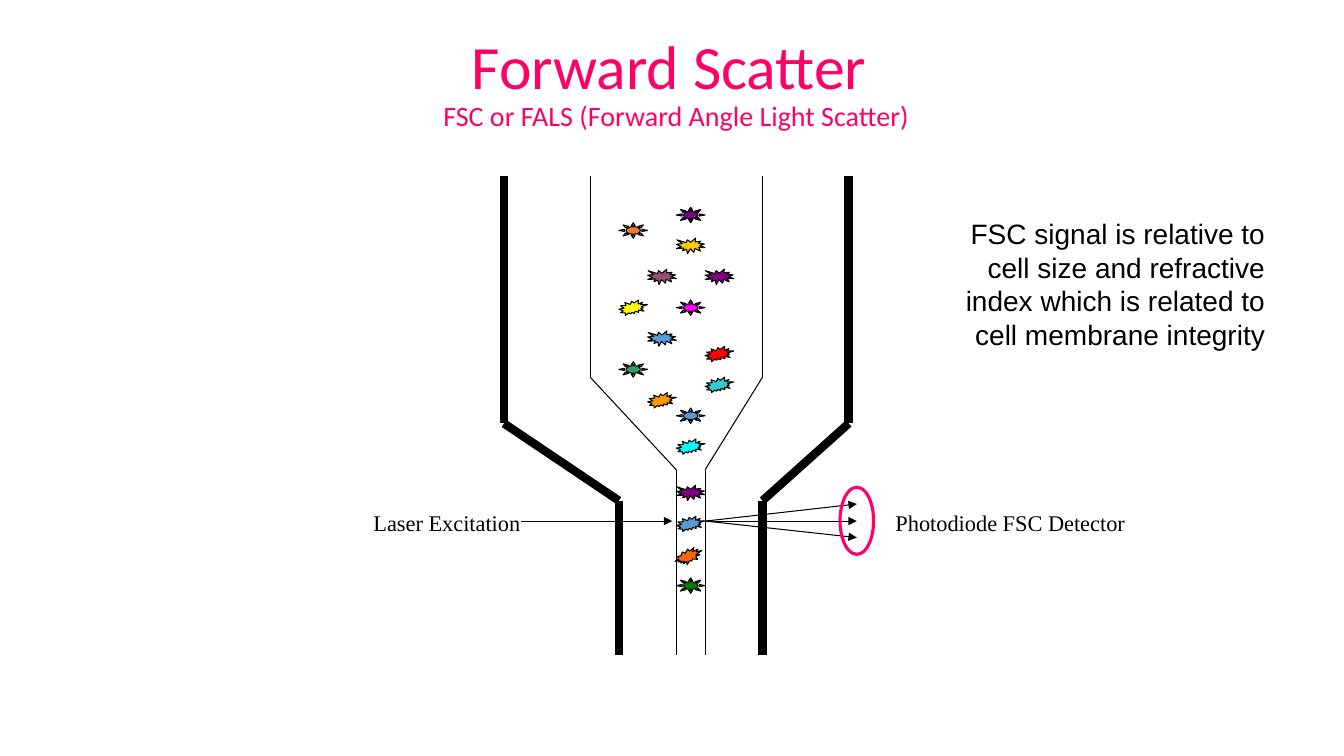
from dataclasses import dataclass

from pptx import Presentation
from pptx.dml.color import RGBColor
from pptx.enum.shapes import MSO_CONNECTOR, MSO_SHAPE
from pptx.enum.text import MSO_ANCHOR, MSO_AUTO_SIZE, PP_ALIGN
from pptx.oxml.ns import qn
from pptx.util import Pt
from lxml.etree import SubElement

TITLE = "Forward Scatter "
SUBTITLE = "FSC or FALS (Forward Angle Light Scatter)"
EXPLANATION = ("FSC signal is relative to cell size and refractive index "
               "which is related to cell membrane integrity")
LABELS = [("Laser Excitation", 257.8, 121), ("Photodiode FSC Detector", 630, 180.7)]

FLOW_CELL_WALLS = [
    [(-4, -2), (-4, 14), (0, 19), (0, 29)],
    [(8, -2), (8, 14), (5, 19), (5, 29)],
]
SAMPLE_STREAM_WALLS = [
    [(-1, -2), (-1, 11), (2, 17), (2, 29)],
    [(5, -2), (5, 11), (3, 17), (3, 29)],
]

ROUND, SPIKY, SLANTED = MSO_SHAPE.SUN, MSO_SHAPE.EXPLOSION1, MSO_SHAPE.EXPLOSION2
CELLS = [
    (2, 0, ROUND, "800080"),
    (0, 1, ROUND, "ED7D31"),
    (2, 2, SPIKY, "FFCC00"),
    (1, 4, SPIKY, "954F72"),
    (3, 4, SPIKY, "800080"),
    (0, 6, SLANTED, "FFFF00"),
    (2, 6, ROUND, "FF00FF"),
    (1, 8, SPIKY, "5B9BD5"),
    (3, 9, SLANTED, "FF0000"),
    (0, 10, ROUND, "339966"),
    (3, 11, SLANTED, "33CCCC"),
    (1, 12, SLANTED, "FF9900"),
    (2, 13, ROUND, "5B9BD5"),
    (2, 15, SLANTED, "00FFFF"),
    (2, 18, SPIKY, "800080"),
    (2, 20, SLANTED, "5B9BD5"),
    (2, 24, ROUND, "008000"),
]
TUMBLING_CELL = (486.7, 387.4, 10.8, 20.2, 54.1, "FF6600")

BEAM_Y = 372.2
BEAMS = [((372.2, BEAM_Y), (480.2, BEAM_Y))] + [
    ((504, BEAM_Y), (612, BEAM_Y + rise)) for rise in (0, 11.8, -12.2)
]
DETECTOR = (600, 348, 24, 48)

GRID_LEFT, GRID_TOP = 442.08, 148.06
COLUMN, ROW = 20.52, 11.03


@dataclass(frozen=True)
class Theme:
    accent: str = "FF0066"
    ink: str = "000000"
    title_font: str = "Calibri"
    label_font: str = "Times New Roman"
    body_font: str = "Arial"
    title_size: float = 44
    body_size: float = 20
    label_size: float = 16
    thin: float = 0.75
    outline: float = 2.25
    thick: float = 6


THEME = Theme()


def color(value):
    return RGBColor.from_string(value)


def grid_point(column, row):
    return GRID_LEFT + column * COLUMN, GRID_TOP + row * ROW


def add_text(paragraph, text, *, font, size, fill=THEME.ink, align=PP_ALIGN.RIGHT):
    paragraph.alignment = align
    run = paragraph.add_run()
    run.text = text
    run.font.name = font
    run.font.size = Pt(size)
    run.font.color.rgb = color(fill)


def add_text_box(slide, text, box, *, wrap, **text_format):
    frame = slide.shapes.add_textbox(*map(Pt, box)).text_frame
    frame.word_wrap = wrap
    frame.auto_size = MSO_AUTO_SIZE.SHAPE_TO_FIT_TEXT
    add_text(frame.paragraphs[0], text, **text_format)


def add_line(slide, start, end, width, arrow=False):
    line = slide.shapes.add_connector(MSO_CONNECTOR.STRAIGHT, *map(Pt, start + end))
    line.line.color.rgb = color(THEME.ink)
    line.line.width = Pt(width)
    if arrow:
        SubElement(line.line._get_or_add_ln(), qn("a:tailEnd"), type="triangle")
    SubElement(line._element.spPr, qn("a:effectLst"))


def add_figure(slide, kind, box, *, fill=None, line=THEME.ink, width=THEME.thin, rotation=0):
    shape = slide.shapes.add_shape(kind, *map(Pt, box))
    shape.shadow.inherit = False
    shape.rotation = rotation
    if fill:
        shape.fill.solid()
        shape.fill.fore_color.rgb = color(fill)
    else:
        shape.fill.background()
    shape.line.color.rgb = color(line)
    shape.line.width = Pt(width)


def add_title(slide):
    title = slide.shapes.title
    title.left, title.top, title.width, title.height = map(Pt, (69, 8, 828, 104.4))
    title.text_frame.vertical_anchor = MSO_ANCHOR.MIDDLE
    title.text_frame.word_wrap = True
    paragraph = title.text_frame.paragraphs[0]
    paragraph.line_spacing = 0.9
    heading = dict(font=THEME.title_font, fill=THEME.accent, align=PP_ALIGN.CENTER)
    add_text(paragraph, TITLE, size=THEME.title_size, **heading)
    paragraph.add_line_break()
    add_text(paragraph, SUBTITLE, size=THEME.body_size, **heading)


def add_flow_cell(slide):
    for walls, width in ((FLOW_CELL_WALLS, THEME.thick), (SAMPLE_STREAM_WALLS, THEME.thin)):
        for wall in walls:
            for start, end in zip(wall, wall[1:]):
                add_line(slide, grid_point(*start), grid_point(*end), width)
    for column, row, kind, fill in CELLS:
        add_figure(slide, kind, grid_point(column, row) + (COLUMN, ROW), fill=fill)
    *box, rotation, fill = TUMBLING_CELL
    add_figure(slide, SLANTED, box, fill=fill, rotation=rotation)


def main():
    presentation = Presentation()
    presentation.slide_width, presentation.slide_height = Pt(960), Pt(540)
    slide = presentation.slides.add_slide(presentation.slide_layouts[5])
    add_title(slide)
    add_flow_cell(slide)
    for start, end in BEAMS:
        add_line(slide, start, end, THEME.thin, arrow=True)
    for text, left, width in LABELS:
        add_text_box(slide, text, (left, 360, width, 26.6), wrap=False,
                     font=THEME.label_font, size=THEME.label_size)
    add_figure(slide, MSO_SHAPE.OVAL, DETECTOR, line=THEME.accent, width=THEME.outline)
    add_text_box(slide, EXPLANATION, (682.6, 151.2, 228.2, 104.4), wrap=True,
                 font=THEME.body_font, size=THEME.body_size)
    presentation.save("out.pptx")


if __name__ == "__main__":
    main()
